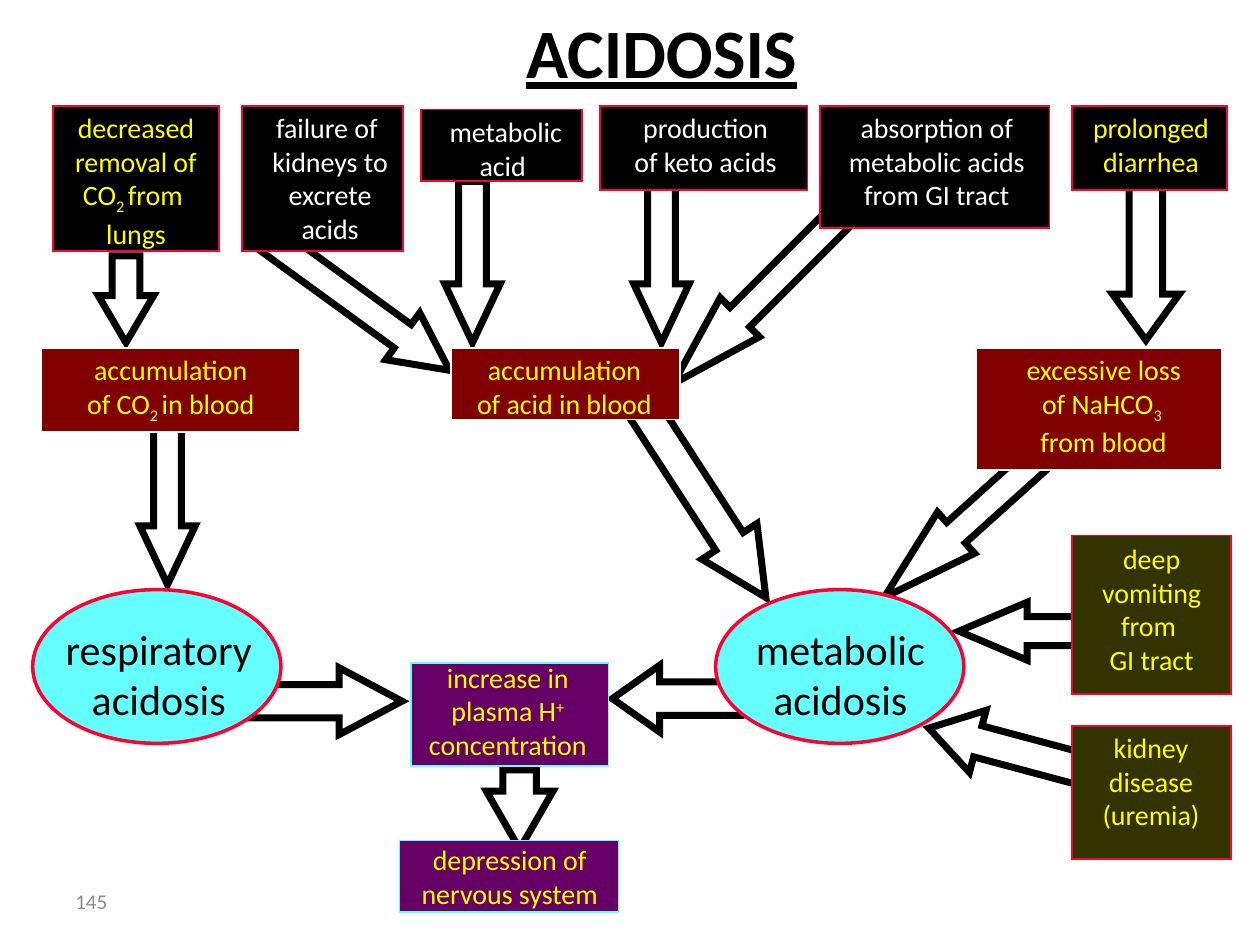
from lxml.etree import SubElement
from pptx import Presentation
from pptx.dml.color import RGBColor
from pptx.enum.shapes import MSO_SHAPE
from pptx.enum.text import MSO_ANCHOR, MSO_AUTO_SIZE, PP_ALIGN
from pptx.oxml.ns import qn
from pptx.util import Inches, Pt

THEME = dict(
    font="Calibri", title=39.6, state=24, body=16, number=12,
    black="000000", white="FFFFFF", yellow="FFFF00", grey="8C8C8C", red="FF0033",
    cyan="66FFFF", maroon="800000", olive="333300", purple="660066",
)


def add_text(tf, text, size="body", color="yellow", align=PP_ALIGN.CENTER,
             anchor=MSO_ANCHOR.TOP, wrap=False, bold=False, underline=False):
    tf.auto_size = MSO_AUTO_SIZE.NONE
    tf.word_wrap = wrap
    tf.vertical_anchor = anchor
    for i, line in enumerate(text.split("\n")):
        p = tf.paragraphs[0] if i == 0 else tf.add_paragraph()
        p.alignment = align
        for j, part in enumerate(line.split("|")):
            if not part:
                continue
            r = p.add_run()
            r.text = part
            r.font.name = THEME["font"]
            r.font.size = Pt(THEME[size])
            r.font.color.rgb = RGBColor.from_string(THEME[color])
            r.font.bold = bold
            r.font.underline = underline
            if j % 2:
                r._r.get_or_add_rPr().set("baseline", "30000" if part == "+" else "-25000")


def add_shape(shapes, kind, at, fill, line, width):
    sp = shapes.add_shape(kind, *map(Inches, at))
    sp.shadow.inherit = False
    sp.fill.solid()
    sp.fill.fore_color.rgb = RGBColor.from_string(THEME[fill])
    sp.line.color.rgb = RGBColor.from_string(THEME[line])
    sp.line.width = Pt(width)
    SubElement(sp.line._get_or_add_ln(), qn("a:miter"), lim="800000")
    return sp


prs = Presentation()
prs.slide_width, prs.slide_height = Inches(10), Inches(7.5)
s = prs.slides.add_slide(prs.slide_layouts[5])

title = s.shapes.title
title.left, title.top, title.width, title.height = map(Inches, (1, 0.25, 8.5, 0.31))
add_text(title.text_frame, "ACIDOSIS", size="title", color="black",
         anchor=MSO_ANCHOR.MIDDLE, wrap=True, bold=True, underline=True)

number = s.shapes.add_textbox(Inches(0.5), Inches(6.95), Inches(2.33), Inches(0.4))
add_text(number.text_frame, "145", size="number", color="grey",
         align=PP_ALIGN.LEFT, anchor=MSO_ANCHOR.MIDDLE, wrap=True)

DOWN, LEFT = MSO_SHAPE.DOWN_ARROW, MSO_SHAPE.LEFT_ARROW
arrows = [
    (DOWN, (3.86, 6.11, 0.53, 0.63), 0.87, 0),
    (DOWN, (0.78, 2.03, 0.44, 0.69), 0.85, 0),
    (DOWN, (7.56, 3.03, 0.44, 2.05), 1.74, 48),
    (DOWN, (5.32, 3.06, 0.52, 1.83), 1.02, 327),
    (LEFT, (7.34, 5.76, 1.82, 0.51), 0.79, 15),
    (LEFT, (7.61, 4.78, 1.56, 0.46), 1.18, 0),
    (DOWN, (1.11, 3.36, 0.44, 1.28), 1.06, 0),
    (DOWN, (3.53, 1.44, 0.44, 1.28), 1.06, 0),
    (DOWN, (2.61, 1.51, 0.46, 1.8), 1, 306),
    (DOWN, (5.03, 1.44, 0.44, 1.28), 1.06, 0),
    (DOWN, (5.83, 1.34, 0.44, 2), 1.7, 45),
    (DOWN, (8.83, 1.42, 0.53, 1.28), 0.69, 0),
    (LEFT, (4.86, 5.28, 1.02, 0.53), 0.71, 0),
    (LEFT, (1.83, 5.3, 1.36, 0.53), 0.94, 180),
]
for kind, at, head, rotation in arrows:
    sp = add_shape(s.shapes, kind, at, "white", "black", 4)
    sp.adjustments[0], sp.adjustments[1] = 0.5, head
    sp.rotation = rotation

RECT, OVAL = MSO_SHAPE.RECTANGLE, MSO_SHAPE.OVAL
STYLES = {
    "cause": (RECT, "black", "red", 1, "body", "white"),
    "loss": (RECT, "black", "red", 1, "body", "yellow"),
    "build_up": (RECT, "maroon", "white", 1, "body", "yellow"),
    "other": (RECT, "olive", "red", 1, "body", "yellow"),
    "effect": (RECT, "purple", "cyan", 1, "body", "yellow"),
    "state": (OVAL, "cyan", "red", 2, "state", "black"),
}
boxes = [
    ("loss", (0.42, 0.84, 1.32, 1.15), (0.4, 0.83, 1.36), "decreased\nremoval of\nCO|2 |from \nlungs"),
    ("cause", (1.92, 0.84, 1.28, 1.15), (1.97, 0.83, 1.3), "failure of \nkidneys to\nexcrete\nacids"),
    ("cause", (3.34, 0.87, 1.28, 0.57), (3.38, 0.86, 1.27), "metabolic\nacid "),
    ("cause", (4.76, 0.84, 1.65, 0.67), (4.82, 0.83, 1.56), "production\nof keto acids"),
    ("cause", (6.51, 0.84, 1.82, 0.97), (6.48, 0.83, 1.91), "absorption of\nmetabolic acids\nfrom GI tract"),
    ("loss", (8.51, 0.84, 1.23, 0.67), (8.48, 0.83, 1.31), "prolonged\ndiarrhea"),
    ("build_up", (0.33, 2.76, 2.05, 0.67), (0.46, 2.75, 1.79), "accumulation\nof CO|2 |in blood"),
    ("build_up", (3.58, 2.76, 1.82, 0.57), (3.56, 2.75, 1.84), "accumulation\nof acid in blood"),
    ("build_up", (7.75, 2.76, 1.95, 0.97), (7.88, 2.75, 1.76), "excessive loss\nof NaHCO|3 |\nfrom blood"),
    ("state", (5.68, 4.68, 1.97, 1.22), (5.77, 4.9, 1.8), "metabolic\nacidosis"),
    ("other", (8.51, 4.25, 1.26, 1.26), (8.58, 4.25, 1.12), "deep\nvomiting\nfrom \nGI tract"),
    ("other", (8.51, 5.76, 1.26, 1.06), (8.58, 5.75, 1.11), "kidney\ndisease\n(uremia)"),
    ("effect", (3.26, 5.26, 1.57, 0.82), (3.17, 5.19, 1.72), "increase in\nplasma H|+|\nconcentration"),
    ("effect", (3.17, 6.67, 1.74, 0.57), (3.1, 6.64, 1.89), "depression of\nnervous system"),
    ("state", (0.26, 4.68, 1.97, 1.22), (0.25, 4.9, 2.02), "respiratory\nacidosis"),
]
for style, at, (left, top, width), text in boxes:
    kind, fill, line, weight, size, color = STYLES[style]
    group = s.shapes.add_group_shape()
    add_shape(group.shapes, kind, at, fill, line, weight)
    lines = text.count("\n") + 1
    height = 0.1 + lines * THEME[size] * 1.2 / 72
    label = group.shapes.add_textbox(Inches(left), Inches(top), Inches(width), Inches(height))
    add_text(label.text_frame, text, size=size, color=color)

prs.save("out.pptx")
